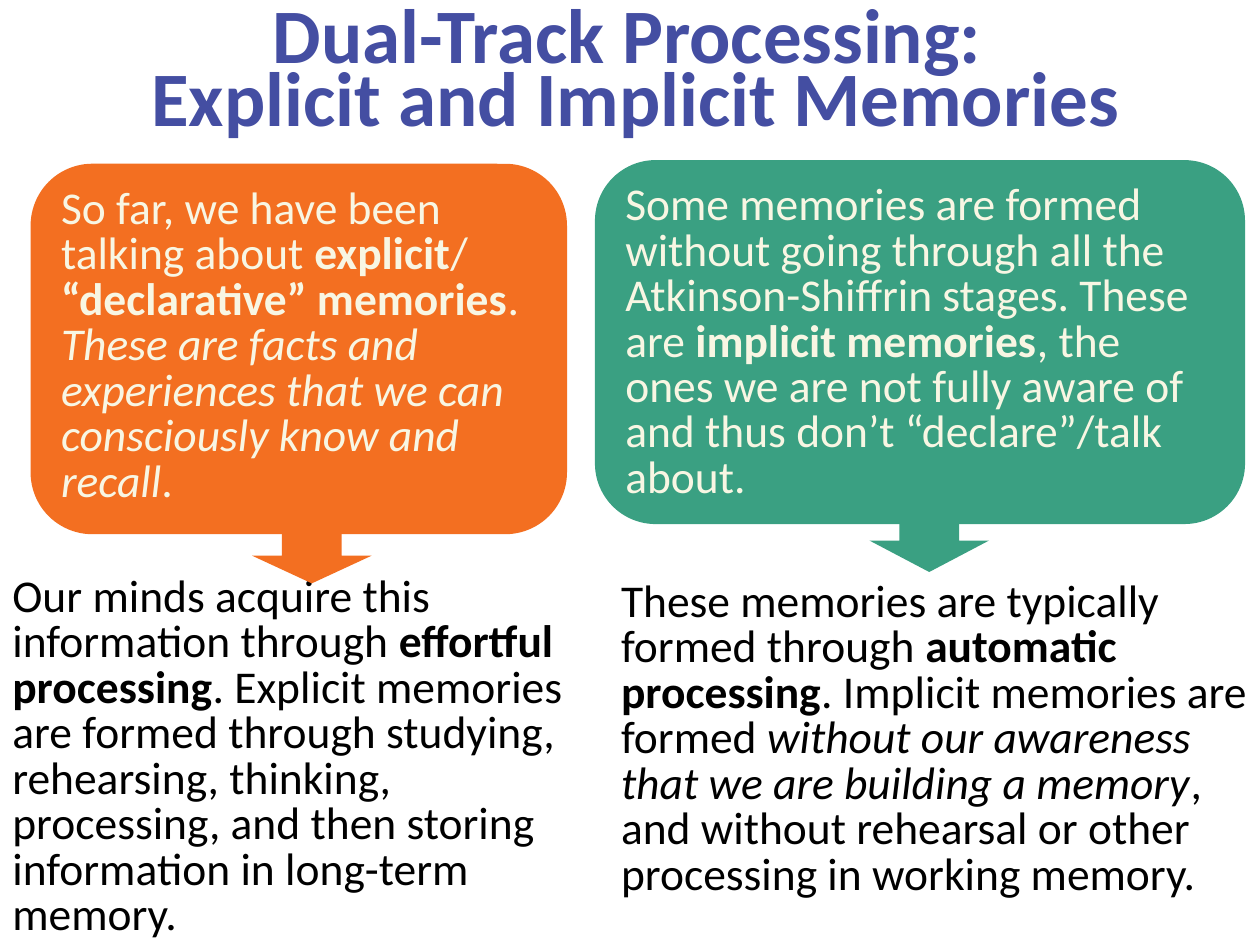
from dataclasses import dataclass

from lxml.etree import SubElement
from pptx import Presentation
from pptx.dml.color import RGBColor
from pptx.enum.shapes import MSO_SHAPE as Preset
from pptx.enum.text import MSO_ANCHOR as Anchor, MSO_AUTO_SIZE as Fit, PP_ALIGN as Align
from pptx.oxml.ns import qn
from pptx.util import Pt


@dataclass(frozen=True)
class Theme:
    font: str = "Calibri"
    title_size: float = 44
    title_leading: float = 36
    text_size: float = 26
    text_leading: float = 26
    heading: str = "444EA2"
    ink: str = "000000"
    cream: str = "F8F6E3"
    explicit: str = "F36F21"
    implicit: str = "3AA082"


class MemorySlide:
    """Holds the theme and the current slide, and draws each kind of element."""

    def __init__(self, deck, theme):
        self.theme = theme
        self.slide = deck.slides.add_slide(deck.slide_layouts[1])

    def place(self, part, box):
        part.left, part.top, part.width, part.height = map(Pt, box)

    def paint(self, part, color):
        part.fill.solid()
        part.fill.fore_color.rgb = RGBColor.from_string(color)
        part.line.fill.background()

    def add_run(self, paragraph, words, size, color, style=""):
        run = paragraph.add_run()
        run.text = words
        run.font.name = self.theme.font
        run.font.size = Pt(size)
        run.font.color.rgb = RGBColor.from_string(color)
        run.font.bold = "b" in style
        run.font.italic = "i" in style

    def add_words(self, part, runs, color, fit=Fit.SHAPE_TO_FIT_TEXT):
        frame = part.text_frame
        frame.word_wrap = True
        frame.auto_size = fit
        frame.vertical_anchor = Anchor.TOP
        paragraph = frame.paragraphs[0]
        paragraph.alignment = Align.LEFT
        paragraph.line_spacing = Pt(self.theme.text_leading)
        paragraph.space_before = Pt(0)
        for words, style in runs:
            self.add_run(paragraph, words, self.theme.text_size, color, style)
        return paragraph

    def title(self, box, lines):
        heading = self.slide.shapes.title
        self.place(heading, box)
        frame = heading.text_frame
        frame.auto_size = Fit.NONE
        frame.vertical_anchor = Anchor.MIDDLE
        paragraph = frame.paragraphs[0]
        paragraph.alignment = Align.CENTER
        paragraph.line_spacing = Pt(self.theme.title_leading)
        for number, line in enumerate(lines):
            if number:
                paragraph.add_line_break()
            self.add_run(paragraph, line, self.theme.title_size, self.theme.heading, "b")

    def body_card(self, box, color, runs):
        card = self.slide.placeholders[1]
        self.place(card, box)
        outline = SubElement(card.element.spPr, qn("a:prstGeom"), prst="roundRect")
        SubElement(outline, qn("a:avLst"))
        self.paint(card, color)
        paragraph = self.add_words(card, runs, self.theme.cream, Fit.NONE)
        settings = paragraph._p.get_or_add_pPr()
        settings.set("marL", "0")
        settings.set("indent", "0")
        SubElement(settings, qn("a:buNone"))

    def preset(self, kind, box, color):
        part = self.slide.shapes.add_shape(kind, *map(Pt, box))
        part.shadow.inherit = False
        self.paint(part, color)
        return part

    def card(self, box, color, runs):
        self.add_words(self.preset(Preset.ROUNDED_RECTANGLE, box, color), runs, self.theme.cream)

    def arrow(self, box, color):
        self.preset(Preset.DOWN_ARROW, box, color)

    def passage(self, box, runs):
        self.add_words(self.slide.shapes.add_textbox(*map(Pt, box)), runs, self.theme.ink)


IMPLICIT_MEANING = [
    ("Some memories are formed without going through all the Atkinson-Shiffrin stages. These are ", ""),
    ("implicit memories", "b"),
    (", the ones we are not fully aware of and thus don’t “declare”/talk about.", ""),
]
EXPLICIT_MEANING = [
    ("So far, we have been talking about ", ""),
    ("explicit", "b"),
    ("/ ", ""),
    ("“declarative” memories", "b"),
    (". ", ""),
    ("These are facts and experiences that we can consciously know and recall", "i"),
    (".", ""),
]
EXPLICIT_PROCESS = [
    ("Our minds acquire this information through ", ""),
    ("effortful processing", "b"),
    (". Explicit memories are formed through studying, rehearsing, thinking, processing, "
     "and then storing information in long-term memory.", ""),
]
IMPLICIT_PROCESS = [
    ("These memories are typically formed through ", ""),
    ("automatic processing", "b"),
    (". Implicit memories are formed ", ""),
    ("without our awareness that we are building a memory", "i"),
    (", and without rehearsal or other processing in working memory.", ""),
]


def main():
    deck = Presentation()
    deck.slide_width, deck.slide_height = Pt(720), Pt(540)
    theme = Theme()
    page = MemorySlide(deck, theme)
    page.title((39.6, 0, 648, 90), ["Dual-Track Processing: ", "Explicit and Implicit Memories"])
    page.body_card((340, 91.5, 371.5, 208), theme.implicit, IMPLICIT_MEANING)
    page.passage((0, 325.5, 340.5, 224), EXPLICIT_PROCESS)
    page.passage((347.8, 328.4, 372.2, 194.4), IMPLICIT_PROCESS)
    page.card((17.5, 93.6, 306.5, 211.7), theme.explicit, EXPLICIT_MEANING)
    page.arrow((144, 301.7, 68.4, 31.7), theme.explicit)
    page.arrow((496.8, 290.9, 68.4, 36), theme.implicit)
    deck.save("out.pptx")


if __name__ == "__main__":
    main()
